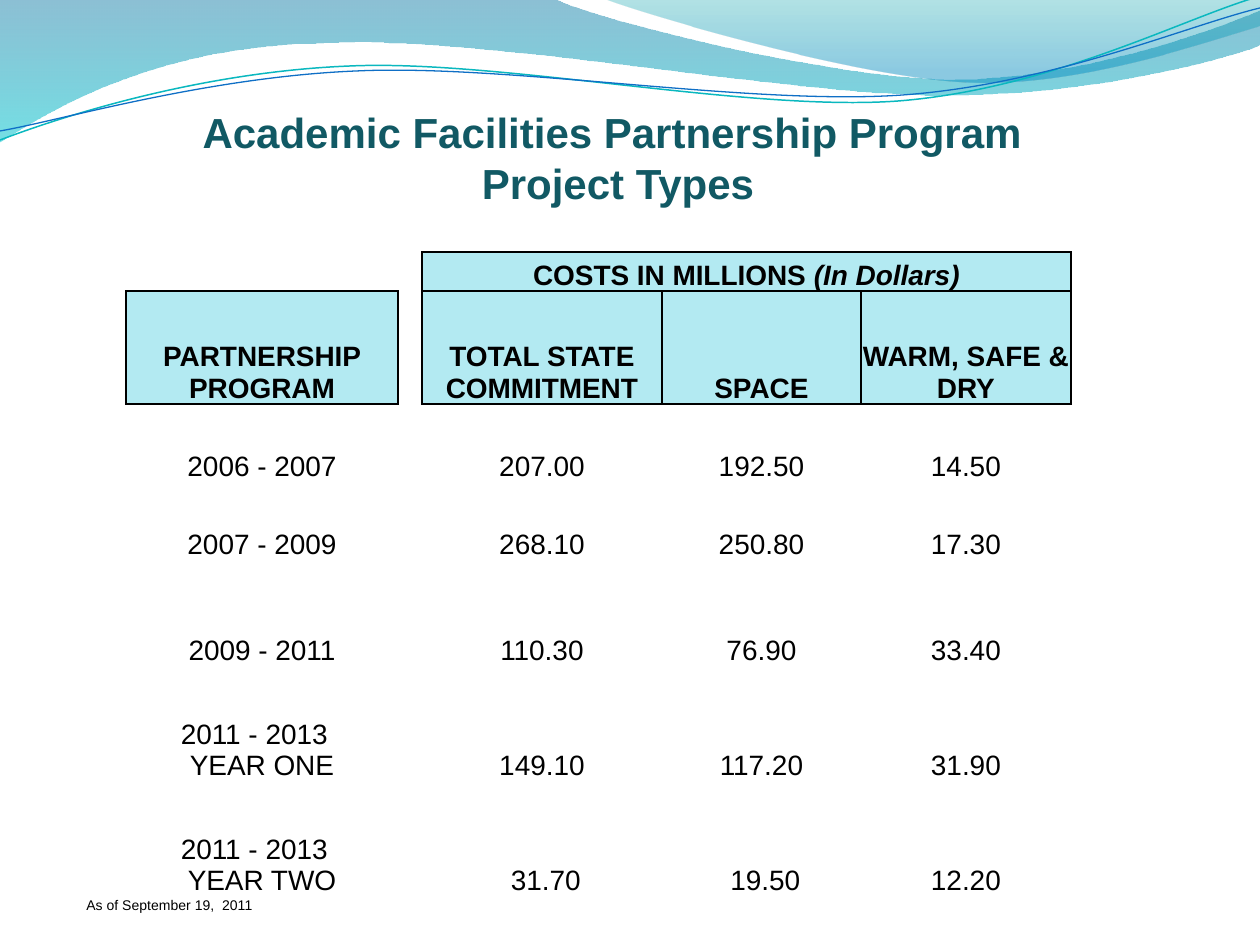
import pptx
import pptx.dml.color
import pptx.enum.text
import pptx.oxml.ns
import pptx.util
from lxml import etree

# Content
TITLE = ["Academic Facilities Partnership Program ", "Project Types"]
FOOTNOTE = "As of September 19,  2011"
COST_HEADING = [("COSTS IN MILLIONS ", False), ("(In Dollars)", True)]
HEADINGS = ["PARTNERSHIP PROGRAM", None, "TOTAL STATE COMMITMENT", "SPACE", "WARM, SAFE & DRY"]
# Row height, period lines, then total, space, and warm, safe & dry
PROGRAMS = [
    (39, ["2006 - 2007"], "207.00", "192.50", "14.50"),
    (39, ["2007 - 2009"], "268.10", "250.80", "17.30"),
    (68, ["2009 - 2011"], "110.30", "76.90", "33.40"),
    (76, ["2011 - 2013  ", "YEAR ONE"], "149.10", "117.20", "31.90"),
    (76, ["2011 - 2013  ", "YEAR TWO"], " 31.70", " 19.50", "12.20"),
]
COLUMNS = [272, 24, 240, 199, 210]
GAP_ROW, HEADING_ROW = 39, 113

THEME = {
    "font": "Arial", "title": "115964", "text": "000000", "heading": "B3EAF2",
    "title_size": 24, "table_size": 16, "note_size": 8,
}

# Curves: a start, then one end point (straight) or three points (Bezier) per step
BANDS = [
    ([[(0, 0)], [(554, -1)],
      [(600, 21), (837, 79), (955, 79)], [(1075, 79), (1207, 33), (1260, 11)],
      [(1261, 45)],
      [(1239, 55), (1096, 96), (940, 95)], [(784, 95), (481, 35), (324, 43)],
      [(163, 45), (58, 105), (-1, 142)]],
     [(0, "0074A1", 45), (1, "00C6CF", 55)]),
    ([[(604, -1)],
      [(641, 14), (859, 78), (969, 82)], [(1079, 87), (1211, 40), (1260, 26)],
      [(1260, 0)]],
     [(0, "00A1A9", 30), (0.8, "008BBF", 45)]),
]
STRANDS = [
    ([[(0, 140)], [(60, 117), (199, 72), (349, 66)], [(498, 59), (747, 112), (898, 101)],
      [(1050, 89), (1182, 19), (1257, -3)]], "0AB8BF", 0.85),
    ([[(0, 131)], [(59, 121), (207, 77), (357, 71)], [(508, 64), (752, 106), (903, 95)],
      [(1053, 84), (1186, 26), (1260, 8)]], "0F6FC6", 0.75),
]

qn = pptx.oxml.ns.qn
Pt = pptx.util.Pt
ALIGN = pptx.enum.text.PP_ALIGN
ANCHOR = pptx.enum.text.MSO_ANCHOR


def px(length):
    return pptx.util.Emu(round(length * 914400 / 126))


def rgb(code):
    return pptx.dml.color.RGBColor.from_string(code)


def write(frame, lines, size, color=THEME["text"], bold=False, align=ALIGN.CENTER, before=0):
    """Fill a frame; a line is a string or a list of (text, italic) spans."""
    for index, line in enumerate(lines):
        para = frame.paragraphs[0] if index == 0 else frame.add_paragraph()
        para.alignment = align
        para.space_before = Pt(before)
        for text, italic in [(line, False)] if isinstance(line, str) else line:
            span = para.add_run()
            span.text = text
            span.font.name, span.font.size = THEME["font"], Pt(size)
            span.font.bold, span.font.italic = bold, italic
            span.font.color.rgb = rgb(color)


def draw_curve(page, steps, close):
    """Build an outline through every point, then join each three-point step into a Bezier."""
    points = [(px(x), px(y)) for step in steps for x, y in step]
    builder = page.shapes.build_freeform(*points[0], scale=1.0)
    builder.add_line_segments(points[1:], close=close)
    shape = builder.convert_to_shape()
    shape.shadow.inherit = False
    segments = iter(list(shape._element.iter(qn("a:lnTo"))))
    for step in steps[1:]:
        first, *others = [next(segments) for _ in step]
        if others:
            curve = etree.Element(qn("a:cubicBezTo"))
            first.addprevious(curve)
            for segment in [first, *others]:
                curve.append(segment[0])
                segment.getparent().remove(segment)
    return shape


def draw_waves(page):
    for steps, stops in BANDS:
        band = draw_curve(page, steps, close=True)
        band.line.fill.background()
        band.fill.gradient()
        band.fill.gradient_angle = 270
        for stop, (position, color, _) in zip(band.fill.gradient_stops, stops):
            stop.position, stop.color.rgb = position, rgb(color)
        for node, (_, _, opacity) in zip(band._element.spPr.iter(qn("a:srgbClr")), stops):
            etree.SubElement(node, qn("a:alpha"), val=str(opacity * 1000))
    for steps, color, width in STRANDS:
        strand = draw_curve(page, steps, close=False)
        strand.fill.background()
        strand.line.color.rgb, strand.line.width = rgb(color), Pt(width)


def outline(cell):
    for side in "LRTB":
        line = etree.SubElement(cell._tc.get_or_add_tcPr(), qn(f"a:ln{side}"), w=str(Pt(1)))
        fill = etree.SubElement(line, qn("a:solidFill"))
        etree.SubElement(fill, qn("a:srgbClr"), val=THEME["text"])


def set_cell(cell, lines=None, heading=False):
    size = THEME["table_size"]
    cell.margin_left = cell.margin_right = cell.margin_top = px(1)
    cell.margin_bottom = 0
    cell.vertical_anchor = ANCHOR.BOTTOM
    if heading:
        outline(cell)
        cell.fill.solid()
        cell.fill.fore_color.rgb = rgb(THEME["heading"])
    else:
        cell.fill.background()
    if lines:
        write(cell.text_frame, lines, size, bold=heading)
    else:
        para = cell.text_frame.paragraphs[0]._p
        etree.SubElement(para, qn("a:endParaRPr"), sz=str(size * 100))


def draw_table(page):
    # Each row: height, lines per column, columns styled as headings
    rows = [(GAP_ROW, [None, None, [COST_HEADING], None, None], {2, 3, 4}),
            (HEADING_ROW, [[text] if text else None for text in HEADINGS], {0, 2, 3, 4})]
    blank = (GAP_ROW, [None] * len(COLUMNS), set())
    for height, period, *costs in PROGRAMS:
        rows += [blank, (height, [period, None, *[[cost] for cost in costs]], set())]
    rows.append(blank)

    frame = page.shapes.add_table(len(rows), len(COLUMNS), px(126), px(252),
                                  px(sum(COLUMNS)), px(sum(row[0] for row in rows)))
    table = frame.table
    table.first_row = table.horz_banding = False
    # Plain style without lines or fills
    table._tbl.tblPr.find(qn("a:tableStyleId")).text = "{2D5ABB26-0587-4C30-8999-92F81FD0307C}"
    for column, width in zip(table.columns, COLUMNS):
        column.width = px(width)
    table.cell(0, 2).merge(table.cell(0, 4))
    for r, (height, cells, headings) in enumerate(rows):
        table.rows[r].height = px(height)
        for c, lines in enumerate(cells):
            set_cell(table.cell(r, c), lines, heading=c in headings)


def main():
    deck = pptx.Presentation()
    deck.slide_width, deck.slide_height = px(1260), px(945)
    page = deck.slides.add_slide(deck.slide_layouts[5])
    draw_waves(page)

    # Title, raised above the waves
    title = page.shapes.title
    page.shapes._spTree.append(title._element)
    title.left, title.top, title.width, title.height = px(98), px(100), px(1040), px(115)
    title.text_frame.auto_size = pptx.enum.text.MSO_AUTO_SIZE.NONE
    title.text_frame.vertical_anchor = ANCHOR.TOP
    write(title.text_frame, TITLE, THEME["title_size"], color=THEME["title"], bold=True,
          before=0.4)

    draw_table(page)

    # Footnote
    box = page.shapes.add_textbox(px(74), px(890), px(199), px(30))
    box.text_frame.word_wrap = True
    write(box.text_frame, [FOOTNOTE], THEME["note_size"], align=ALIGN.LEFT)
    deck.save("out.pptx")


if __name__ == "__main__":
    main()
